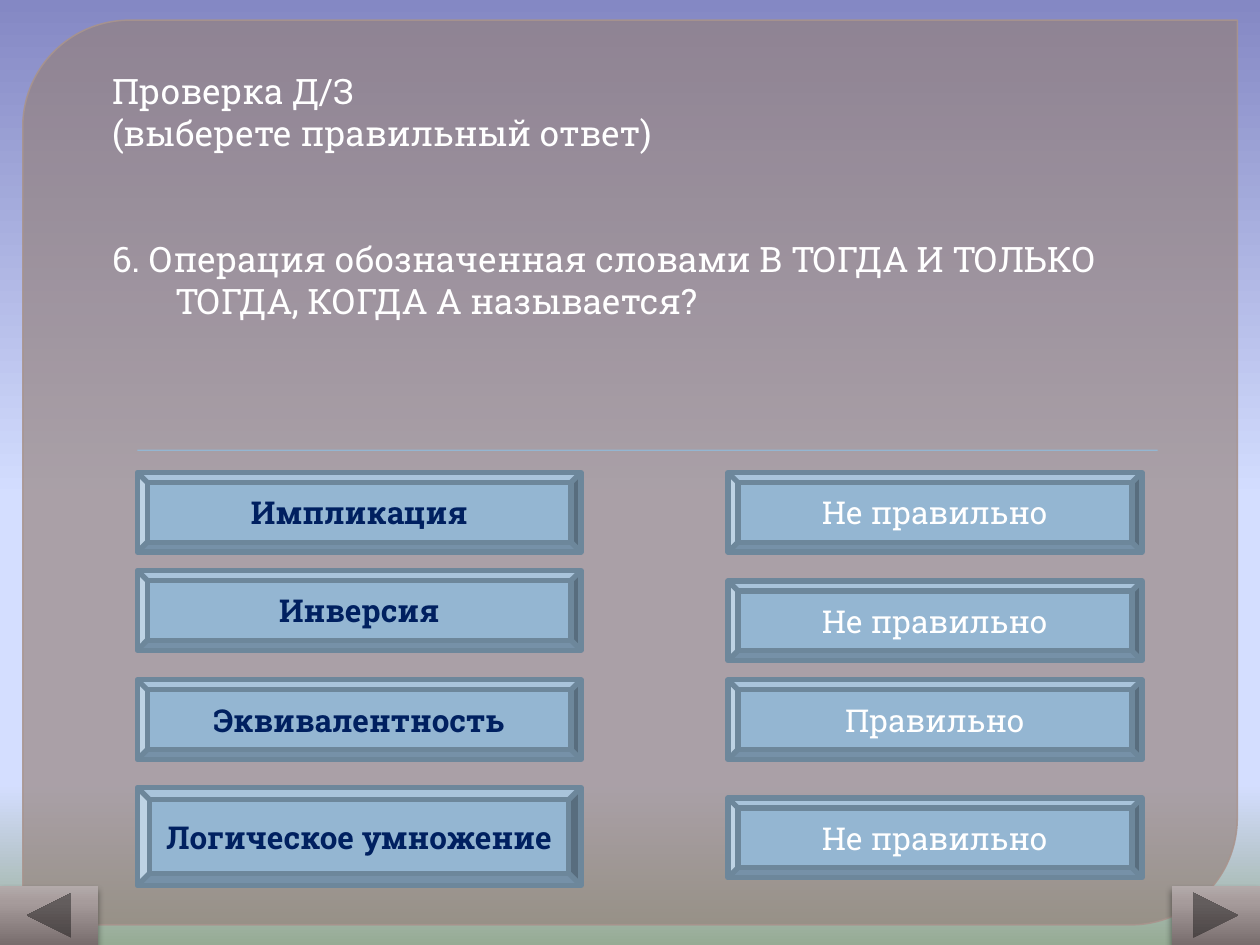
import pptx
import pptx.dml.color
import pptx.enum.shapes
import pptx.enum.text
import pptx.oxml
import pptx.oxml.ns
import pptx.util

Pt = pptx.util.Pt
Shape = pptx.enum.shapes.MSO_SHAPE
Align = pptx.enum.text.PP_ALIGN
Anchor = pptx.enum.text.MSO_ANCHOR
qn = pptx.oxml.ns.qn

COLOURS = {
    "white": "FFFFFF", "navy": "002060", "black": "000000",
    "blue": "94B6D2", "blue_edge": "6D879B",
    "panel": "948079", "panel_edge": "A9948D",
}
SKY = [(0, "8488C4"), (53, "D4DEFF"), (83, "D4DEFF"), (100, "96AB94")]
STONE = [(0, "786D6D"), (72, "A69B9B"), (100, "B3AAAA")]


def rgb(name):
    """Return the named colour."""
    return pptx.dml.color.RGBColor.from_string(COLOURS[name])


def child(parent, tag, **attributes):
    """Append a drawing element to the parent."""
    node = pptx.oxml.parse_xml(f"<a:{tag} {pptx.oxml.ns.nsdecls('a')}/>")
    for key, value in attributes.items():
        node.set(key, str(value))
    parent.append(node)
    return node


def set_opacity(element, tag, percent):
    """Make the first solid colour below the tag partly transparent."""
    colour = element.find(f".//{tag}/{qn('a:srgbClr')}")
    child(colour, "alpha", val=percent * 1000)


def set_gradient(fill, element, stops, angle):
    """Fill with a linear gradient of any number of stops."""
    fill.gradient()
    gradient = element.find(".//" + qn("a:gradFill"))
    for node in list(gradient):
        gradient.remove(node)
    stop_list = child(gradient, "gsLst")
    for position, colour in stops:
        stop = child(stop_list, "gs", pos=position * 1000)
        child(stop, "srgbClr", val=colour)
    child(gradient, "lin", ang=angle * 60000, scaled=0)


def write(para, text, size=18, colour="white", bold=False, align=None):
    """Put formatted text into a paragraph."""
    para.alignment = align
    span = para.add_run()
    span.text = text
    span.font.name = "Roboto Slab"
    span.font.size = Pt(size)
    span.font.bold = bold
    span.font.color.rgb = rgb(colour)


class Quiz:
    """Hold the style and the current page."""

    def __init__(self, page):
        self.page = page
        set_gradient(page.background.fill, page.element, SKY, 90)

    def shape(self, kind, left, top, width, height, fill=None, edge=None, weight=0):
        """Add a preset shape without a shadow."""
        shape = self.page.shapes.add_shape(
            kind, Pt(left), Pt(top), Pt(width), Pt(height))
        shape.shadow.inherit = False
        if fill:
            shape.fill.solid()
            shape.fill.fore_color.rgb = rgb(fill)
        if edge:
            shape.line.color.rgb = rgb(edge)
            shape.line.width = Pt(weight)
        else:
            shape.line.fill.background()
        return shape

    def shadow(self, shape, opacity, blur, distance):
        """Cast a black shadow downwards."""
        effects = shape.element.spPr.find(qn("a:effectLst"))
        outer = child(effects, "outerShdw", blurRad=Pt(blur), dist=Pt(distance),
                      dir=5400000, algn="ctr", rotWithShape=0)
        colour = child(outer, "srgbClr", val=COLOURS["black"])
        child(colour, "alpha", val=opacity * 1000)

    def panel(self):
        """Add the translucent panel and its divider."""
        panel = self.shape(Shape.ROUND_2_DIAG_RECTANGLE, 13, 11.5, 694, 517,
                           "panel", "panel_edge", 0.87)
        panel.adjustments[0] = 0.118
        panel.adjustments[1] = 0
        set_opacity(panel.element, qn("a:solidFill"), 65)
        set_opacity(panel.element, f"{qn('a:ln')}/{qn('a:solidFill')}", 88)
        divider = self.shape(Shape.RECTANGLE, 78.5, 257, 583, 0.7, "blue")
        self.shadow(divider, 75, 1, 1)

    def question(self, heading, text):
        """Add the heading lines and the question with a hanging indent."""
        box = self.page.shapes.add_textbox(Pt(57), Pt(34), Pt(612), Pt(472))
        frame = box.text_frame
        frame.word_wrap = True
        frame.margin_top = Pt(5.5)
        frame.margin_right = Pt(10)
        for index, line in enumerate([*heading, text]):
            para = frame.add_paragraph() if index else frame.paragraphs[0]
            para.line_spacing = Pt(24)
            write(para, line, size=20)
        para.space_before = Pt(48)
        properties = para._p.get_or_add_pPr()
        properties.set("marL", str(Pt(36)))
        properties.set("indent", str(-Pt(36)))

    def button(self, text, left, top, width, height=45.5, **style):
        """Add a bevelled button with a centred label."""
        button = self.shape(Shape.BEVEL, left, top, width, height,
                            "blue", "blue_edge", 3)
        frame = button.text_frame
        frame.word_wrap = True
        frame.vertical_anchor = Anchor.MIDDLE
        write(frame.paragraphs[0], text, align=Align.CENTER, **style)

    def arrow(self, kind, left, width):
        """Add a navigation button at the foot of the page."""
        arrow = self.shape(kind, left, 506, width, 34)
        set_gradient(arrow.fill, arrow.element.spPr, STONE, 270)
        self.shadow(arrow, 43, 4, 3)


def main():
    """Build the quiz page."""
    deck = pptx.Presentation()
    deck.slide_width, deck.slide_height = Pt(720), Pt(540)
    quiz = Quiz(deck.slides.add_slide(deck.slide_layouts[6]))
    quiz.panel()
    quiz.question(
        ["Проверка Д/З", "(выберете правильный ответ)"],
        "6. Операция обозначенная словами В ТОГДА И ТОЛЬКО ТОГДА, КОГДА А называется?")
    verdicts = [("Не правильно", 270), ("Не правильно", 332),
                ("Правильно", 388.5), ("Не правильно", 456)]
    for text, top in verdicts:
        quiz.button(text, 416, top, 236.5)
    answers = [("Импликация", 270, 45.5), ("Инверсия", 326, 45.5),
               ("Эквивалентность", 388.5, 45.5), ("Логическое умножение", 450, 56)]
    for text, top, height in answers:
        quiz.button(text, 78.5, top, 253.5, height, colour="navy", bold=True)
    quiz.arrow(Shape.ACTION_BUTTON_FORWARD_OR_NEXT, 669.5, 50.5)
    quiz.arrow(Shape.ACTION_BUTTON_BACK_OR_PREVIOUS, 0, 56)
    deck.save("out.pptx")


if __name__ == "__main__":
    main()
